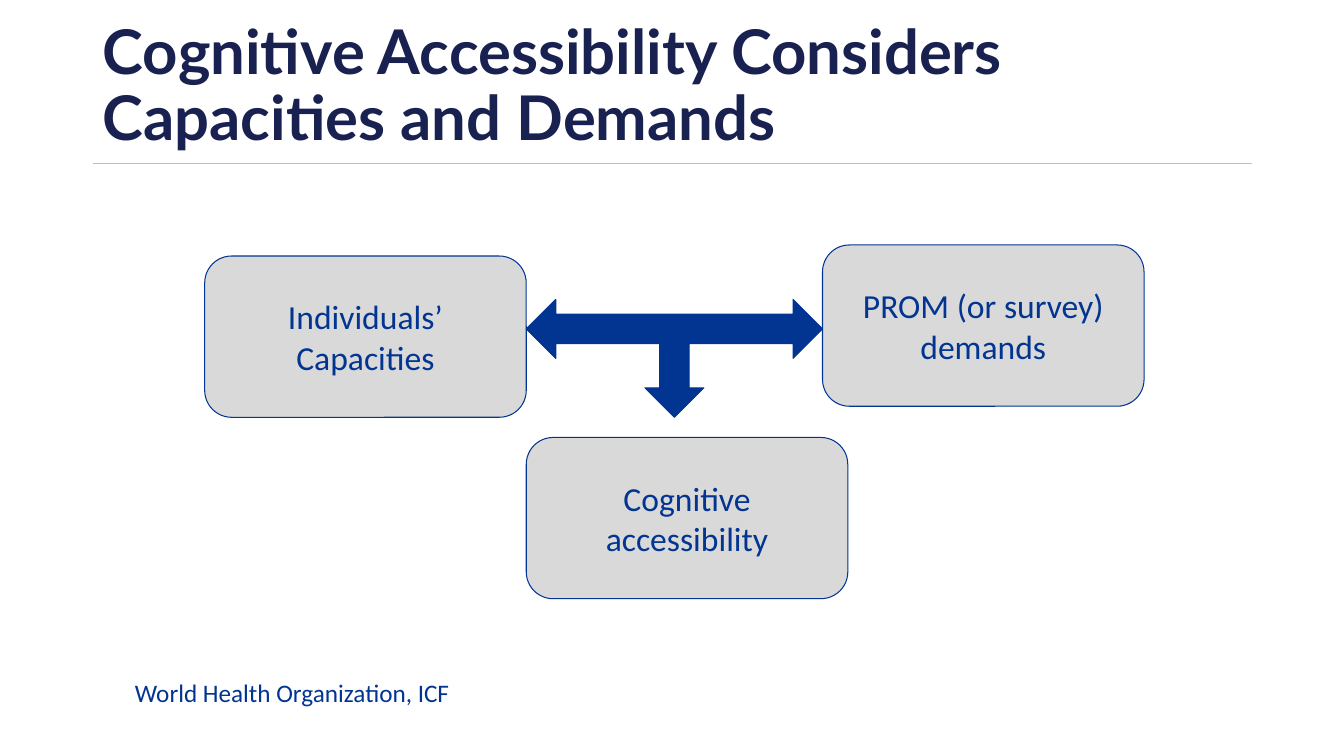
from pptx import Presentation
from pptx.dml.color import RGBColor
from pptx.enum.shapes import MSO_CONNECTOR, MSO_SHAPE
from pptx.enum.text import MSO_ANCHOR, MSO_AUTO_SIZE, PP_ALIGN
from pptx.oxml.ns import qn
from pptx.util import Pt

COLORS = {"navy": "18214F", "blue": "013591", "grey": "D9D9D9", "rule": "BFBFBF"}
CARD_W, CARD_H = 229.7, 115.2


def rgb(name):
    return RGBColor.from_string(COLORS[name])


def set_font(paragraph, name, size, color, bold=False):
    font = paragraph.font
    font.name, font.size, font.bold = name, Pt(size), bold
    font.color.rgb = rgb(color)


def add_filled(slide, kind, box, fill):
    shape = slide.shapes.add_shape(kind, *map(Pt, box))
    shape.shadow.inherit = False
    shape.fill.solid()
    shape.fill.fore_color.rgb = rgb(fill)
    shape.line.color.rgb = rgb("blue")
    shape.line.width = Pt(0.75)
    return shape


def add_card(slide, left, top, text):
    card = add_filled(slide, MSO_SHAPE.ROUNDED_RECTANGLE,
                      (left, top, CARD_W, CARD_H), "grey")
    frame = card.text_frame
    frame.word_wrap = True
    frame.vertical_anchor = MSO_ANCHOR.MIDDLE
    frame.text = text
    frame.paragraphs[0].alignment = PP_ALIGN.CENTER
    set_font(frame.paragraphs[0], "Calibri", 24, "blue")


def add_heading(slide, left, top, width, height):
    # Rule below the title
    rule_y = Pt(top + height + 2.8)
    rule = slide.shapes.add_connector(
        MSO_CONNECTOR.STRAIGHT, Pt(left), rule_y, Pt(left + 828), rule_y)
    rule.line.color.rgb = rgb("rule")
    rule.line.width = Pt(1)
    properties = rule._element.spPr
    properties.append(properties.makeelement(qn("a:effectLst"), {}))

    # Title, growing upwards from the rule
    title = slide.shapes.title
    title.left, title.top = Pt(left), Pt(top)
    title.width, title.height = Pt(width), Pt(height)
    frame = title.text_frame
    frame.text = "Cognitive Accessibility Considers Capacities and Demands"
    frame.word_wrap = True
    frame.auto_size = MSO_AUTO_SIZE.NONE
    frame.vertical_anchor = MSO_ANCHOR.BOTTOM
    heading = frame.paragraphs[0]
    heading.alignment = PP_ALIGN.LEFT
    heading.line_spacing = 0.9
    set_font(heading, "Lato", 44, "navy", bold=True)


def add_diagram(slide, left, top, width):
    arrow_left = left + CARD_W
    demands_left = left + width - CARD_W

    # The two sides and their result
    add_card(slide, left, top + 7.9, "Individuals’ Capacities")
    add_card(slide, demands_left, top, "PROM (or survey) demands")
    add_card(slide, arrow_left, top + 137.5, "Cognitive accessibility")

    # Three-way arrow, turned to point down
    arrow = add_filled(slide, MSO_SHAPE.LEFT_RIGHT_UP_ARROW,
                       (arrow_left, top + 38.9, demands_left - arrow_left, 84.2),
                       "blue")
    arrow.rotation = 180


def add_citation(slide, left, top, width, height):
    citation = slide.shapes.add_textbox(*map(Pt, (left, top, width, height)))
    frame = citation.text_frame
    frame.word_wrap = True
    frame.auto_size = MSO_AUTO_SIZE.SHAPE_TO_FIT_TEXT
    frame.text = "World Health Organization, ICF"
    set_font(frame.paragraphs[0], "Calibri", 18, "blue")


def main():
    deck = Presentation()
    deck.slide_width, deck.slide_height = Pt(960), Pt(540)
    slide = deck.slides.add_slide(deck.slide_layouts[5])
    add_heading(slide, 66.2, 45.4, 829.4, 68.4)
    add_diagram(slide, 146.2, 175, 671)
    add_citation(slide, 89.3, 480.2, 480.2, 29)
    deck.save("out.pptx")


if __name__ == "__main__":
    main()
